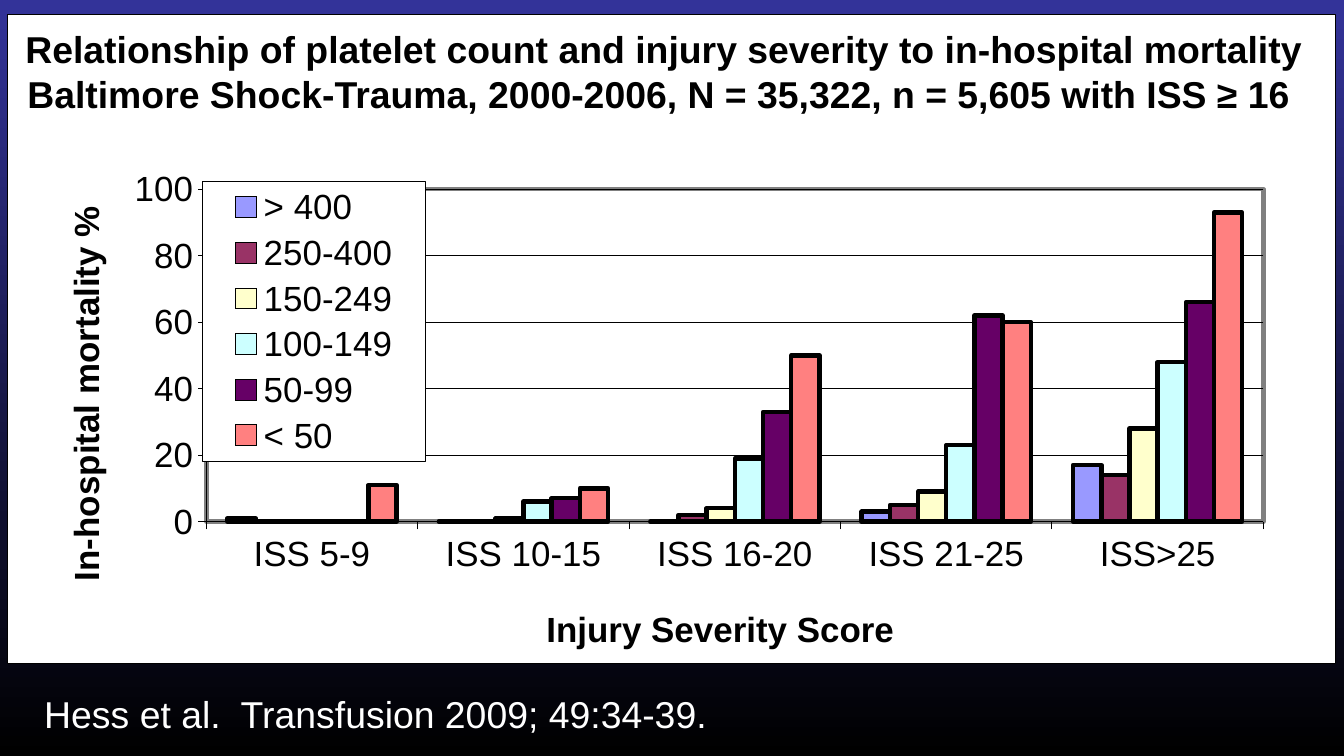
from dataclasses import dataclass
from typing import Any

from lxml import etree
from pptx import Presentation
from pptx.chart.data import CategoryChartData
from pptx.dml.color import RGBColor
from pptx.enum.chart import XL_CHART_TYPE, XL_LEGEND_POSITION, XL_TICK_MARK
from pptx.enum.text import MSO_AUTO_SIZE, PP_ALIGN
from pptx.oxml import parse_xml
from pptx.oxml.ns import nsdecls, qn
from pptx.util import Emu, Pt

COLUMNS = XL_CHART_TYPE.COLUMN_CLUSTERED
RIGHT = XL_LEGEND_POSITION.RIGHT
OUTSIDE, NO_TICK = XL_TICK_MARK.OUTSIDE, XL_TICK_MARK.NONE
GROW = MSO_AUTO_SIZE.SHAPE_TO_FIT_TEXT
LEFT, CENTER = PP_ALIGN.LEFT, PP_ALIGN.CENTER

PX = 914400 / 134.4
FONT = "Arial"
BLACK, WHITE, GREY = "000000", "FFFFFF", "808080"
THIN, THICK = 0.58, 2.34
CHART_SIZE = 18.7


@dataclass
class Box:
    x: int
    y: int
    w: int
    h: int

    def emu(self) -> list[Emu]:
        return [Emu(round(v * PX)) for v in (self.x, self.y, self.w, self.h)]


@dataclass
class PlateletGroup:
    name: str
    mortality: tuple[int, ...]
    color: str


@dataclass
class Label:
    box: Box
    lines: list[str]
    color: str
    bold: bool
    align: Any


CHART = Box(7, 14, 1329, 650)
PLOT = Box(206, 189, 1058, 333)
LEGEND = Box(202, 181, 223, 281)
X_TITLE = Box(540, 600, 347, 34)
Y_TITLE = Box(56, 200, 34, 375)

ISS_BANDS = ["ISS 5-9", "ISS 10-15", "ISS 16-20", "ISS 21-25", "ISS>25"]
GROUPS = [
    PlateletGroup("> 400", (1, 0, 0, 3, 17), "9999FF"),
    PlateletGroup("250-400", (0, 0, 2, 5, 14), "993366"),
    PlateletGroup("150-249", (0, 1, 4, 9, 28), "FFFFCC"),
    PlateletGroup("100-149", (0, 6, 19, 23, 48), "CCFFFF"),
    PlateletGroup("50-99", (0, 7, 33, 62, 66), "660066"),
    PlateletGroup("< 50", (11, 10, 50, 60, 93), "FF8080"),
]
LABELS = [
    Label(Box(31, 685, 706, 59), ["Hess et al.  Transfusion 2009; 49:34-39."],
          WHITE, False, LEFT),
    Label(Box(8, 20, 1313, 103), [
        "Relationship of platelet count and injury severity to in-hospital mortality",
        "Baltimore Shock-Trauma, 2000-2006, N = 35,322, n = 5,605 with ISS ≥ 16 ",
    ], BLACK, True, CENTER),
]


def rgb(color: str) -> RGBColor:
    return RGBColor.from_string(color)


def apply(obj: Any, values: dict[str, Any]) -> None:
    for name, value in values.items():
        setattr(obj, name, value)


def set_font(font: Any, size: float, color: str, bold: bool) -> None:
    apply(font, {"name": FONT, "size": Pt(size), "bold": bold})
    font.color.rgb = rgb(color)


def set_line(line: Any, color: str, width: float) -> None:
    line.color.rgb = rgb(color)
    line.width = Pt(width)


def frame_xml(color: str, width: float) -> Any:
    return parse_xml(
        f'<c:spPr {nsdecls("c", "a")}>'
        f'<a:solidFill><a:srgbClr val="{WHITE}"/></a:solidFill>'
        f'<a:ln w="{Pt(width)}"><a:solidFill><a:srgbClr val="{color}"/>'
        '</a:solidFill></a:ln></c:spPr>')


def layout_xml(box: Box, sized: bool, inner: bool = False) -> Any:
    layout = parse_xml(f'<c:layout {nsdecls("c")}><c:manualLayout/></c:layout>')
    values = {"layoutTarget": "inner"} if inner else {}
    values |= {"xMode": "edge", "yMode": "edge",
               "x": (box.x - CHART.x) / CHART.w, "y": (box.y - CHART.y) / CHART.h}
    if sized:
        values |= {"w": box.w / CHART.w, "h": box.h / CHART.h}
    for tag, value in values.items():
        text = value if isinstance(value, str) else f"{value:.4f}"
        etree.SubElement(layout[0], qn(f"c:{tag}")).set("val", text)
    return layout


def place(element: Any, box: Box, sized: bool) -> None:
    for old in element.findall(qn("c:layout")):
        element.remove(old)
    element.find(qn("c:overlay")).addprevious(layout_xml(box, sized))


def style_axis(axis: Any, title: str) -> None:
    apply(axis, {"major_tick_mark": OUTSIDE, "minor_tick_mark": NO_TICK})
    set_font(axis.tick_labels.font, CHART_SIZE, BLACK, False)
    set_line(axis.format.line, BLACK, THIN)
    p = axis.axis_title.text_frame.paragraphs[0]
    r = p.add_run()
    r.text = title
    set_font(r.font, CHART_SIZE, BLACK, True)


def add_mortality_chart(s: Any) -> None:
    data = CategoryChartData(number_format="0.0")
    data.categories = ISS_BANDS
    for group in GROUPS:
        data.add_series(group.name, group.mortality)
    chart = s.shapes.add_chart(COLUMNS, *CHART.emu(), data).chart
    apply(chart, {"has_title": False, "has_legend": True})
    set_font(chart.font, CHART_SIZE, BLACK, False)

    plot = chart.plots[0]
    apply(plot, {"gap_width": 150, "overlap": 0, "vary_by_categories": False})
    for series, group in zip(plot.series, GROUPS):
        series.format.fill.solid()
        series.format.fill.fore_color.rgb = rgb(group.color)
        set_line(series.format.line, BLACK, THICK)

    style_axis(chart.category_axis, "Injury Severity Score")
    axis = chart.value_axis
    style_axis(axis, "In-hospital mortality %")
    apply(axis, {"minimum_scale": 0, "maximum_scale": 100, "major_unit": 20,
                 "has_major_gridlines": True})
    set_line(axis.major_gridlines.format.line, BLACK, THIN)
    apply(axis.tick_labels, {"number_format": "0", "number_format_is_linked": False})

    apply(chart.legend, {"position": RIGHT, "include_in_layout": False})
    set_font(chart.legend.font, CHART_SIZE, BLACK, False)

    root = chart.element
    x_title, y_title = root.xpath(".//c:catAx/c:title | .//c:valAx/c:title")
    for title, box in ((x_title, X_TITLE), (y_title, Y_TITLE)):
        if title.find(qn("c:overlay")) is None:
            title.find(qn("c:tx")).addnext(
                parse_xml(f'<c:overlay {nsdecls("c")} val="0"/>'))
        place(title, box, False)
    y_title.xpath(".//a:bodyPr")[0].set("rot", "-5400000")

    legend = root.xpath(".//c:legend")[0]
    place(legend, LEGEND, True)
    legend.find(qn("c:overlay")).addnext(frame_xml(BLACK, THIN))

    area = root.xpath(".//c:plotArea")[0]
    for old in area.findall(qn("c:layout")):
        area.remove(old)
    area.insert(0, layout_xml(PLOT, True, True))
    area.append(frame_xml(GREY, THICK))
    root.find(qn("c:chart")).addnext(frame_xml(BLACK, THIN))


def add_label(s: Any, label: Label) -> None:
    tf = s.shapes.add_textbox(*label.box.emu()).text_frame
    apply(tf, {"word_wrap": False, "auto_size": GROW})
    for i, line in enumerate(label.lines):
        p = tf.add_paragraph() if i else tf.paragraphs[0]
        p.alignment = label.align
        r = p.add_run()
        r.text = line
        set_font(r.font, 20, label.color, label.bold)


def main() -> None:
    prs = Presentation()
    apply(prs, {"slide_width": Emu(round(1344 * PX)),
                "slide_height": Emu(round(756 * PX))})
    s = prs.slides.add_slide(prs.slide_layouts[6])
    fill = s.background.fill
    fill.gradient()
    fill.gradient_angle = 270
    for stop, color in zip(fill.gradient_stops, ("333399", BLACK)):
        stop.color.rgb = rgb(color)
    add_mortality_chart(s)
    for label in LABELS:
        add_label(s, label)
    prs.save("out.pptx")


if __name__ == "__main__":
    main()
